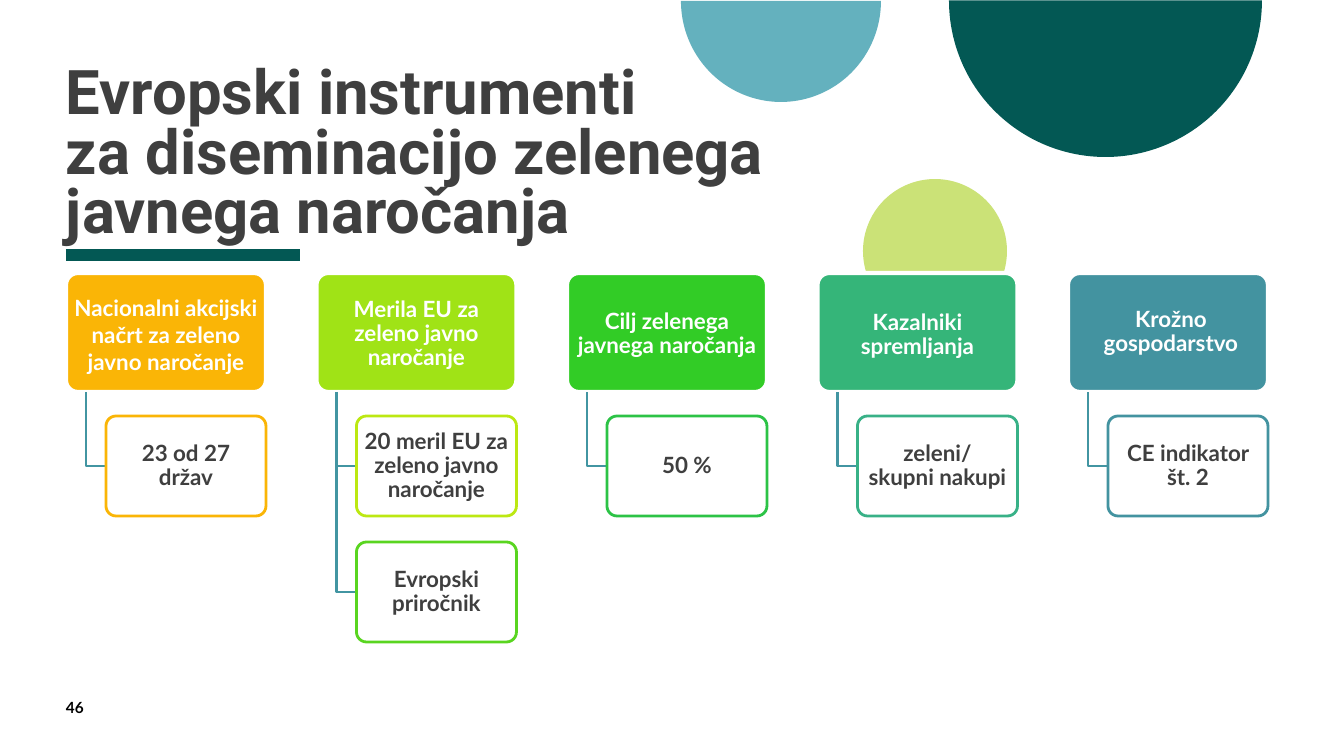
from lxml import etree
from pptx import Presentation
from pptx.dml.color import RGBColor
from pptx.enum.shapes import MSO_SHAPE as SHAPE
from pptx.enum.text import MSO_ANCHOR as ANCHOR, MSO_AUTO_SIZE as AUTO_SIZE, PP_ALIGN as ALIGN
from pptx.oxml.ns import qn
from pptx.util import Emu, Pt

COLORS = {
    "ink": "3F3F3F", "black": "000000", "white": "FFFFFF",
    "pine": "035854", "sky": "64B1BE", "lime": "CBE277", "link": "4295A2",
    "amber": "FAB506", "chartreuse": "A0E316", "green": "32CC26",
    "emerald": "35B579", "teal": "4393A0",
    "yellow green": "BCE812", "leaf": "59D520", "grass": "2CC346", "jade": "38B187",
}
TITLE = "Evropski instrumenti\vza diseminacijo zelenega\vjavnega naročanja"
PAGE_NUMBER = "46"

# shape, box in px, colour
CIRCLES = [
    (SHAPE.PIE, (949, -156, 313, 313), "pine"),
    (SHAPE.PIE, (681, -100, 200, 202), "sky"),
    (SHAPE.OVAL, (863, 179, 144, 144), "lime"),
]
# heading, colour, line spacing, text shift in px (right, down), children (text, line colour)
COLUMNS = [
    ("Nacionalni akcijski načrt za zeleno javno naročanje", "amber", 1.0, (0, 2),
     [("23 od 27\vdržav", "amber")]),
    ("Merila EU za zeleno javno naročanje", "chartreuse", 0.9, (0, 2),
     [("20 meril EU za zeleno javno naročanje", "yellow green"),
      ("Evropski priročnik", "leaf")]),
    ("Cilj zelenega javnega naročanja", "green", 0.9, (0, 2), [("50 %", "grass")]),
    ("Kazalniki spremljanja", "emerald", 0.9, (0, 3),
     [("zeleni/\nskupni nakupi", "jade")]),
    ("Krožno gospodarstvo", "teal", 0.9, (3, 0), [("CE indikator št. 2", "teal")]),
]

FIRST_LEFT, LAST_LEFT = 66, 1068
CARD_TOP, CARD_WIDTH, CARD_HEIGHT = 273, 200, 119
CHILD_TOP, CHILD_WIDTH, CHILD_HEIGHT, CHILD_PITCH = 416, 160, 100, 126
INDENT = 20
INSET = 3


def px(value):
    return Emu(round(value * 914400 / 100.8))


def box(values):
    return [px(value) for value in values]


def rgb(name):
    return RGBColor.from_string(COLORS[name])


def set_text(shape, text, font, color, align=ALIGN.LEFT, spacing=1.0,
             anchor=ANCHOR.TOP, inset=0, shift=(0, 0)):
    frame = shape.text_frame
    right, down = shift
    frame_format = {
        "word_wrap": True, "auto_size": AUTO_SIZE.NONE, "vertical_anchor": anchor,
        "margin_left": px(inset + 2 * right), "margin_right": px(inset),
        "margin_top": px(inset + 2 * down), "margin_bottom": px(inset),
    }
    for name, value in frame_format.items():
        setattr(frame, name, value)
    frame.text = text
    for paragraph in frame.paragraphs:
        paragraph.alignment = align
        paragraph.line_spacing = spacing
        paragraph.space_before = Pt(0)
        for run in paragraph.runs:
            for name, value in font.items():
                setattr(run.font, name, value)
            run.font.color.rgb = rgb(color)


def add_filled(slide, kind, place, fill, line=None, line_width=0):
    shape = slide.shapes.add_shape(kind, *box(place))
    shape.shadow.inherit = False
    shape.fill.solid()
    shape.fill.fore_color.rgb = rgb(fill)
    if line:
        shape.line.color.rgb = rgb(line)
        shape.line.width = Pt(line_width)
    else:
        shape.line.fill.background()
    return shape


def add_card(slide, place, text, color, fill, line, line_width, **text_format):
    card = add_filled(slide, SHAPE.ROUNDED_RECTANGLE, place, fill, line, line_width)
    card.adjustments[0] = 0.1
    set_text(card, text, LABEL_FONT, color, ALIGN.CENTER,
             anchor=ANCHOR.MIDDLE, inset=INSET, **text_format)
    return card


def add_elbow(slide, left, top, bottom):
    """Draw a line down from a heading card and right to its child."""
    builder = slide.shapes.build_freeform(px(left), px(top))
    builder.add_line_segments(
        [(px(left), px(bottom)), (px(left + INDENT), px(bottom))], close=False)
    elbow = builder.convert_to_shape()
    elbow.shadow.inherit = False
    elbow.fill.background()
    elbow.line.color.rgb = rgb("link")
    elbow.line.width = Pt(2)


def set_alpha(shape, percent):
    color = shape.fill._xPr.find(qn("a:solidFill"))[0]
    etree.SubElement(color, qn("a:alpha"), val=str(percent * 1000))


TITLE_FONT = {"name": "Roboto", "size": Pt(44), "bold": True}
LABEL_FONT = {"name": "Lato", "size": Pt(16), "bold": True}
NUMBER_FONT = {"name": "Lato", "size": Pt(11), "bold": True}


def main():
    presentation = Presentation()
    presentation.slide_width, presentation.slide_height = px(1344), px(756)
    slide = presentation.slides.add_slide(presentation.slide_layouts[5])

    rule = slide.shapes.add_connector(1, *box((66, 255, 300, 255)))
    rule.line.color.rgb = rgb("pine")
    rule.line.width = Pt(8)
    etree.SubElement(rule._element.spPr, qn("a:effectLst"))

    for kind, place, color in CIRCLES:
        circle = add_filled(slide, kind, place, color)
        if kind == SHAPE.PIE:
            circle.adjustments[0], circle.adjustments[1] = 0, 108

    number = slide.shapes.add_textbox(*box((66, 698, 57, 27)))
    set_text(number, PAGE_NUMBER, NUMBER_FONT, "black")

    title = slide.shapes.title
    title.left, title.top, title.width, title.height = box((66, 185, 1089, 60))
    set_text(title, TITLE, TITLE_FONT, "ink", spacing=0.8, anchor=ANCHOR.BOTTOM)

    pitch = (LAST_LEFT - FIRST_LEFT) / (len(COLUMNS) - 1)
    for column, (heading, color, spacing, shift, children) in enumerate(COLUMNS):
        left = FIRST_LEFT + column * pitch
        add_card(slide, (left, CARD_TOP, CARD_WIDTH, CARD_HEIGHT), heading, "white",
                 color, "white", 3, spacing=spacing, shift=shift)
        for row, (text, line) in enumerate(children):
            top = CHILD_TOP + row * CHILD_PITCH
            add_elbow(slide, left + INDENT, CARD_TOP + CARD_HEIGHT, top + CHILD_HEIGHT / 2)
            child = add_card(slide, (left + 2 * INDENT, top, CHILD_WIDTH, CHILD_HEIGHT),
                             text, "ink", "white", line, 2, spacing=0.9)
            set_alpha(child, 89)

    presentation.save("out.pptx")


if __name__ == "__main__":
    main()
